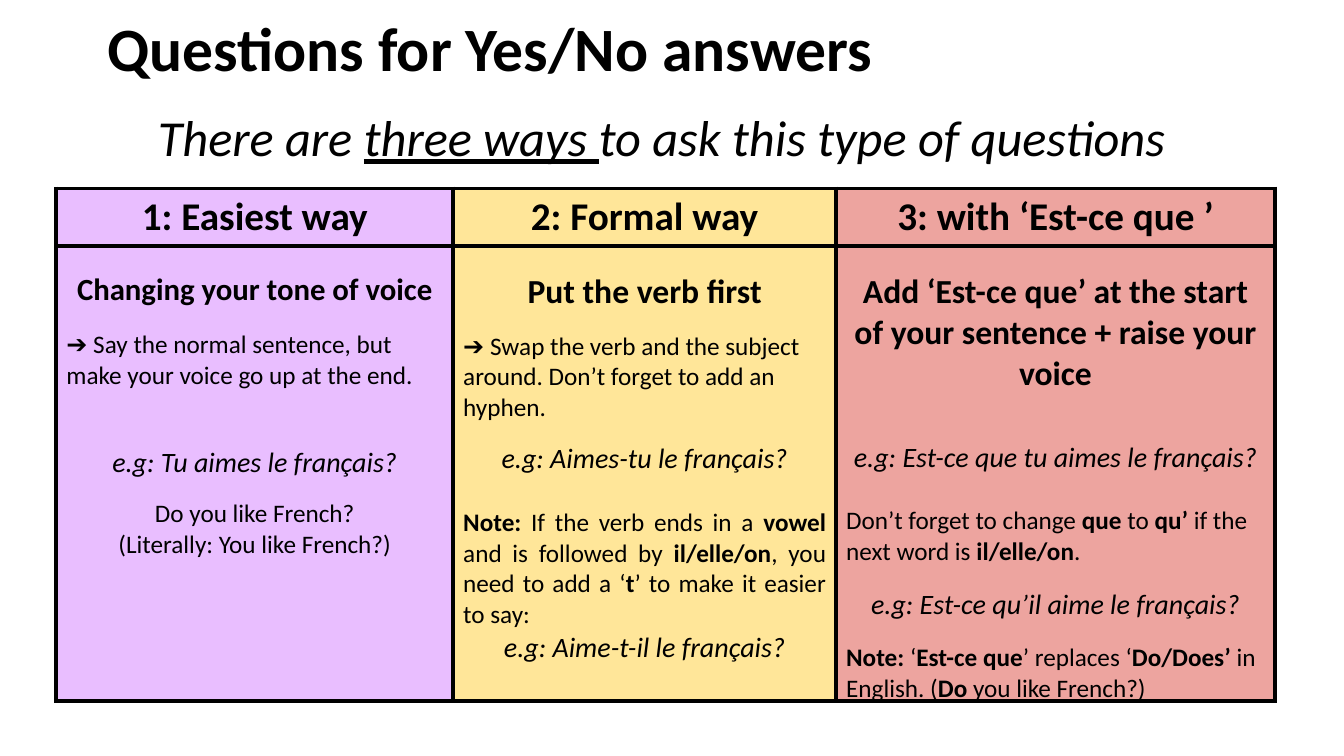
from dataclasses import dataclass

from lxml import etree
from pptx import Presentation
from pptx import util as u
from pptx.dml.color import RGBColor
from pptx.enum import text
from pptx.oxml import ns

COLOURS = {"ink": "000000", "easy": "E9BEFF", "formal": "FFE699", "est_ce": "EDA49F"}
LEFT, CENTER, JUSTIFY = text.PP_ALIGN.LEFT, text.PP_ALIGN.CENTER, text.PP_ALIGN.JUSTIFY
ROW_HEIGHTS = (1.45, 11.46)


@dataclass
class Line:
    text: str
    size: int = 18
    gap: float = 0
    align: text.PP_ALIGN = LEFT
    bold: bool = False
    italic: bool = False


@dataclass
class Way:
    heading: str
    fill: str
    width: float
    lines: list[Line]


def heading(words: str, size: int) -> Line:
    return Line(words, size, align=CENTER, bold=True)


def example(words: str, gap: float = 0) -> Line:
    return Line(words, 20, gap, CENTER, italic=True)


WAYS = [
    Way("1: Easiest way", "easy", 10, [
        heading("Changing your tone of voice", 22),
        Line("➔ Say the normal sentence, but make your voice go up at the end.", gap=14.6),
        example("e.g: Tu aimes le français?", 39),
        Line("Do you like French?", gap=13.4, align=CENTER),
        Line("(Literally: You like French?)", align=CENTER),
    ]),
    Way("2: Formal way", "formal", 9.65, [
        heading("Put the verb first", 24),
        Line("➔ Swap the verb and the subject around. Don’t forget to add an hyphen.", gap=13.4),
        example("e.g: Aimes-tu le français?", 13.4),
        Line("*Note: *If the verb ends in a *vowel* and is followed by *il/elle/on*, "
             "you need to add a ‘*t*’ to make it easier to say:", gap=22, align=JUSTIFY),
        example("e.g: Aime-t-il le français?"),
    ]),
    Way("3: with ‘Est-ce que ’", "est_ce", 11.06, [
        heading("Add ‘Est-ce que’ at the start of your sentence + raise your voice", 24),
        example("e.g: Est-ce que tu aimes le français?", 33),
        Line("Don’t forget to change *que* to *qu’ *if the next word is *il/elle/on*.", gap=22),
        example("e.g: Est-ce qu’il aime le français?", 14.6),
        Line("*Note: *‘*Est-ce que*’ replaces ‘*Do/Does’* in English. "
             "(*Do* you like French?)", gap=14.6),
    ]),
]


def write(p, words: str, *, size: int, gap: float = 0, align=LEFT, bold: bool = False,
          italic: bool = False, mark: str = "bold") -> None:
    """Fill a paragraph; words between asterisks get the font attribute named by mark."""
    p.alignment = align
    p.space_before = u.Pt(gap)
    for i, part in enumerate(words.split("*")):
        if not part:
            continue
        r = p.add_run()
        r.text = part
        r.font.name, r.font.size = "Calibri", u.Pt(size)
        r.font.bold, r.font.italic = bold, italic
        r.font.color.rgb = RGBColor.from_string(COLOURS["ink"])
        if i % 2:
            setattr(r.font, mark, True)


def fill_cell(cell, fill: str, lines: list[Line]) -> None:
    tf = cell.text_frame
    for i, line in enumerate(lines):
        p = tf.add_paragraph() if i else tf.paragraphs[0]
        write(p, line.text, size=line.size, gap=line.gap, align=line.align,
              bold=line.bold, italic=line.italic)
    tc_pr = cell._tc.get_or_add_tcPr()
    for side in ("lnL", "lnR", "lnT", "lnB"):
        ln = etree.SubElement(tc_pr, ns.qn(f"a:{side}"), w=str(u.Pt(3)))
        solid = etree.SubElement(ln, ns.qn("a:solidFill"))
        etree.SubElement(solid, ns.qn("a:srgbClr"), val=COLOURS["ink"])
    cell.fill.solid()
    cell.fill.fore_color.rgb = RGBColor.from_string(COLOURS[fill])


def add_title(s) -> None:
    sp = s.shapes.title
    sp.left, sp.top, sp.width, sp.height = u.Cm(2.46), u.Cm(0), u.Cm(29.21), u.Cm(2.59)
    tf = sp.text_frame
    tf.auto_size = text.MSO_AUTO_SIZE.NONE
    tf.vertical_anchor = text.MSO_ANCHOR.MIDDLE
    p = tf.paragraphs[0]
    p.line_spacing = 0.9
    write(p, "Questions for Yes/No answers", size=44, bold=True)


def add_subtitle(s) -> None:
    tf = s.shapes.add_textbox(u.Cm(3.73), u.Cm(2.54), u.Cm(26.49), u.Cm(1.8)).text_frame
    tf.word_wrap = False
    tf.auto_size = text.MSO_AUTO_SIZE.SHAPE_TO_FIT_TEXT
    write(tf.paragraphs[0], "There are *three ways *to ask this type of questions",
          size=36, italic=True, mark="underline")


def add_ways(s) -> None:
    width = sum(way.width for way in WAYS)
    table = s.shapes.add_table(2, len(WAYS), u.Cm(1.42), u.Cm(4.75),
                               u.Cm(width), u.Cm(sum(ROW_HEIGHTS))).table
    for row, height in zip(table.rows, ROW_HEIGHTS):
        row.height = u.Cm(height)
    for c, way in enumerate(WAYS):
        table.columns[c].width = u.Cm(way.width)
        fill_cell(table.cell(0, c), way.fill, [heading(way.heading, 28)])
        body = table.cell(1, c)
        body.margin_top, body.margin_bottom = u.Cm(0.64), u.Cm(0)
        fill_cell(body, way.fill, way.lines)


def main() -> None:
    prs = Presentation()
    prs.slide_width, prs.slide_height = u.Cm(33.87), u.Cm(19.05)
    s = prs.slides.add_slide(prs.slide_layouts[5])
    add_title(s)
    add_subtitle(s)
    add_ways(s)
    prs.save("out.pptx")


if __name__ == "__main__":
    main()
